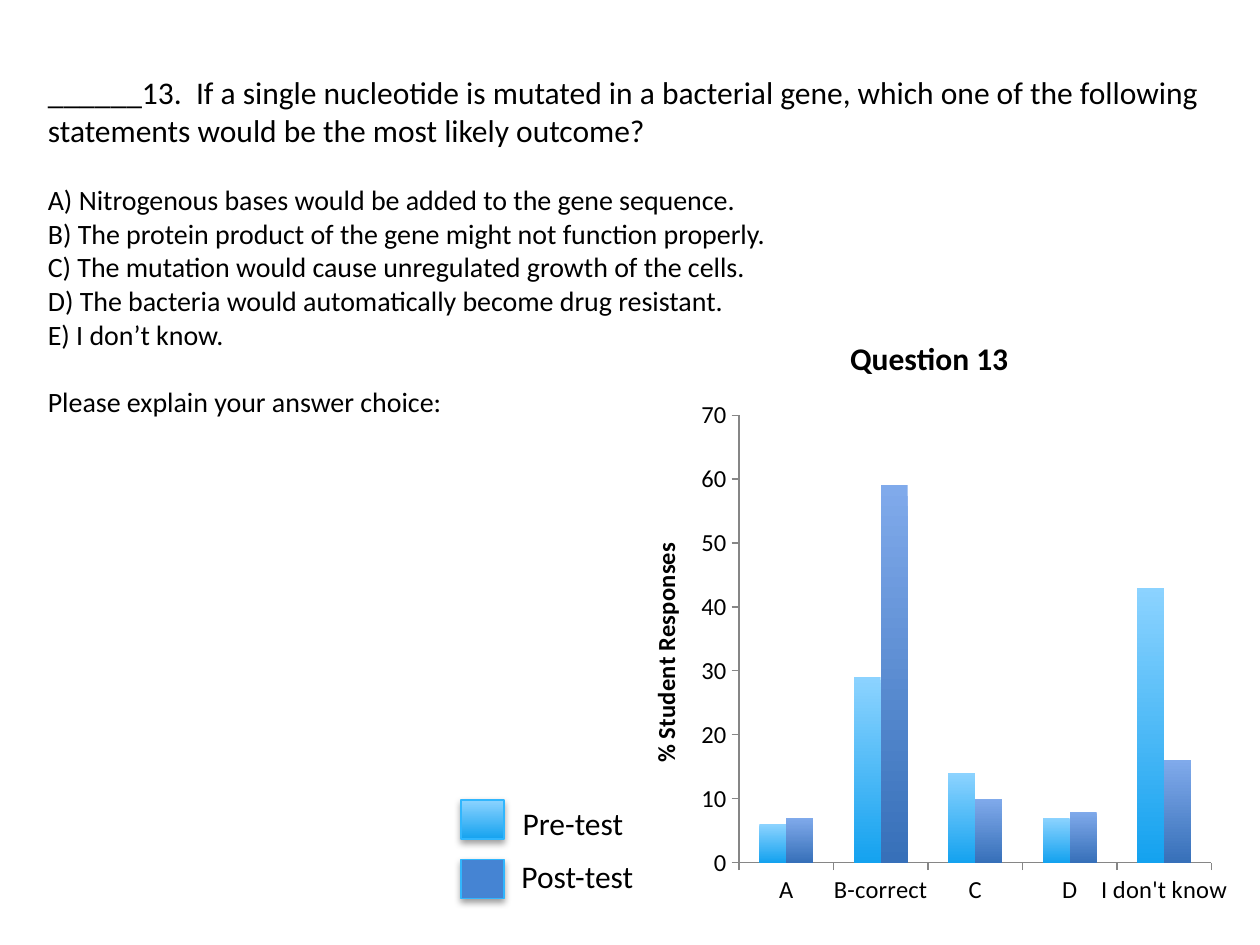
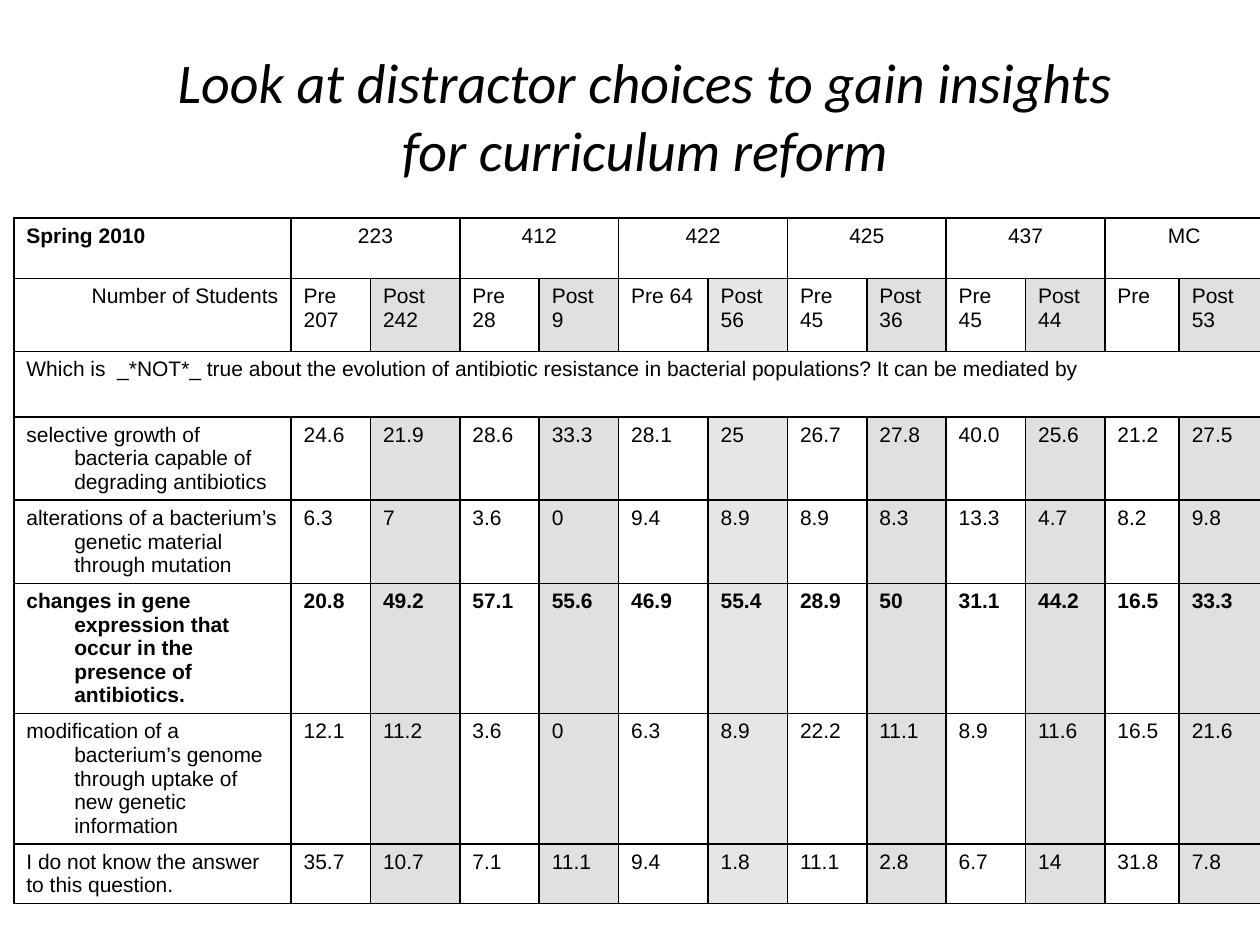
from pptx import Presentation
from pptx.chart.data import CategoryChartData
from pptx.dml.color import RGBColor
from pptx.enum.chart import XL_CHART_TYPE, XL_TICK_MARK
from pptx.enum.shapes import MSO_SHAPE
from pptx.enum.text import MSO_ANCHOR, MSO_AUTO_SIZE, PP_ALIGN
from pptx.oxml import parse_xml
from pptx.oxml.ns import nsdecls, qn
from pptx.util import Inches, Pt

BLACK, WHITE, SKY, BLUE, AXIS = "000000", "FFFFFF", "31B6FD", "4584D3", "868686"
POST_FILL, POST_FILL_LIGHT = "E0E0E0", "E6E6E6"
PRE_GRADIENT = ("8CD3FF", "14A2EF")
POST_GRADIENT = ("80AAEB", "3770B9")

QUESTION_FONT = {"name": "Calibri", "size": Pt(18), "bold": False}
ANSWER_FONT = {"name": "Calibri", "size": Pt(16), "bold": False}
HEADLINE_FONT = {"name": "Calibri", "size": Pt(32), "italic": True}
AXIS_FONT = {"name": "Calibri", "size": Pt(14), "bold": False}
CELL_FONT = {"name": "Arial", "size": Pt(12), "bold": False}
FRAME = {"word_wrap": True, "auto_size": MSO_AUTO_SIZE.NONE,
         "vertical_anchor": MSO_ANCHOR.TOP}

QUESTION = ("______13.  If a single nucleotide is mutated in a bacterial gene, "
            "which one of the following statements would be the most likely outcome?")
ANSWERS = [
    "A) Nitrogenous bases would be added to the gene sequence.",
    "B) The protein product of the gene might not function properly.",
    "C) The mutation would cause unregulated growth of the cells.",
    "D) The bacteria would automatically become drug resistant.",
    "E) I don’t know.",
]
EXPLAIN = "Please explain your answer choice:"
CHOICES = ["A", "B-correct", "C", "D", "I don't know"]
RESPONSES = [
    ("Series 1", [6, 29, 14, 7, 43], PRE_GRADIENT),
    ("Series 2", [7, 59, 10, 8, 16], POST_GRADIENT),
]

COURSES = ["223", "412", "422", "425", "437", "MC"]
STUDENTS = ["Pre 207", "Post\n242", "Pre 28", "Post\n9", "Pre 64", "Post\n56",
            "Pre 45", "Post\n36", "Pre 45", "Post\n44", "Pre", "Post\n53"]
STEM = ("Which is  _*NOT*_ true about the evolution of antibiotic resistance "
        "in bacterial populations? It can be mediated by")
CORRECT = "changes in gene expression that occur in the presence of antibiotics."
UNSURE = "I do not know the answer to this question."
DISTRACTORS = [
    ("selective growth of bacteria capable of degrading antibiotics",
     "24.6 21.9 28.6 33.3 28.1 25 26.7 27.8 40.0 25.6 21.2 27.5"),
    ("alterations of a bacterium’s genetic material through mutation",
     "6.3 7 3.6 0 9.4 8.9 8.9 8.3 13.3 4.7 8.2 9.8"),
    (CORRECT, "20.8 49.2 57.1 55.6 46.9 55.4 28.9 50 31.1 44.2 16.5 33.3"),
    ("modification of a bacterium’s genome through uptake of new genetic information",
     "12.1 11.2 3.6 0 6.3 8.9 22.2 11.1 8.9 11.6 16.5 21.6"),
    (UNSURE, "35.7 10.7 7.1 11.1 9.4 1.8 11.1 2.8 6.7 14 31.8 7.8"),
]
COL_WIDTHS = [2.2, 0.63, 0.71, 0.63, 0.63, 0.71, 0.63, 0.63, 0.63, 0.63, 0.63, 0.59, 0.67]
ROW_HEIGHTS = [0.48, 0.58, 0.52, 0.64, 0.64, 1.01, 1.01, 0.46]


def rgb(color):
    return RGBColor.from_string(color)


def set_attrs(obj, values):
    for name, value in values.items():
        setattr(obj, name, value)


def style_font(font, values):
    set_attrs(font, values)
    font.color.rgb = rgb(BLACK)


def place(sp, left, top, width, height):
    set_attrs(sp, {"left": Inches(left), "top": Inches(top),
                   "width": Inches(width), "height": Inches(height)})


def write(tf, lines, font, align=PP_ALIGN.LEFT, left=0, hang=0):
    for i, line in enumerate(lines):
        p = tf.paragraphs[0] if i == 0 else tf.add_paragraph()
        set_attrs(p, {"alignment": align, "space_before": Pt(0)})
        pPr = p._p.get_or_add_pPr()
        pPr.set("marL", str(Inches(left)))
        pPr.set("indent", str(Inches(-hang)))
        pPr.append(parse_xml(f"<a:buNone {nsdecls('a')}/>"))
        r = p.add_run()
        r.text = line
        style_font(r.font, font)


def fill_placeholder(sp, box, lines, font, align=PP_ALIGN.LEFT):
    place(sp, *box)
    set_attrs(sp.text_frame, FRAME)
    write(sp.text_frame, lines, font, align)


def fill_gradient(fill, colors):
    fill.gradient()
    fill.gradient_angle = 270
    for stop, color in zip(fill.gradient_stops, colors):
        stop.color.rgb = rgb(color)


def add_label(s, text, left, top, width):
    sp = s.shapes.add_textbox(Inches(left), Inches(top), Inches(width), Inches(0.4))
    sp.text_frame.word_wrap = False
    write(sp.text_frame, [text], QUESTION_FONT)


def add_swatch(s, top):
    sp = s.shapes.add_shape(MSO_SHAPE.RECTANGLE, Inches(3.66), Inches(top),
                            Inches(0.34), Inches(0.31))
    sp.line.color.rgb = rgb(SKY)
    sp.line.width = Pt(0.75)
    sp.shadow.inherit = False
    sp._element.spPr.find(qn("a:effectLst")).append(parse_xml(
        f'<a:outerShdw {nsdecls("a")} blurRad="{Pt(4)}" dist="{Pt(2)}" dir="5400000" '
        f'rotWithShape="0"><a:srgbClr val="{BLACK}"><a:alpha val="38000"/>'
        '</a:srgbClr></a:outerShdw>'))
    return sp


def add_legend(s):
    fill_gradient(add_swatch(s, 6.35).fill, PRE_GRADIENT)
    post = add_swatch(s, 6.82)
    post.fill.solid()
    post.fill.fore_color.rgb = rgb(BLUE)
    add_label(s, "Pre-test", 4.05, 6.33, 1.04)
    add_label(s, "Post-test", 4.04, 6.75, 1.16)


def set_title(owner, text, font):
    tf = (owner.chart_title if hasattr(owner, "chart_title") else owner.axis_title).text_frame
    tf.text = text
    style_font(tf.paragraphs[0].runs[0].font, {**font, "bold": True})


def fix_plot_area(chart, x, y, w, h):
    area = chart._chartSpace.chart.plotArea
    for old in area.findall(qn("c:layout")):
        area.remove(old)
    sizes = "".join(f'<c:{k} val="{v}"/>' for k, v in zip("xywh", (x, y, w, h)))
    area.insert(0, parse_xml(
        f'<c:layout {nsdecls("c")}><c:manualLayout><c:layoutTarget val="inner"/>'
        f'<c:xMode val="edge"/><c:yMode val="edge"/>{sizes}</c:manualLayout></c:layout>'))


def add_response_chart(s):
    data = CategoryChartData()
    data.categories = CHOICES
    for name, values, _ in RESPONSES:
        data.add_series(name, values)
    chart = s.shapes.add_chart(XL_CHART_TYPE.COLUMN_CLUSTERED, Inches(4.94), Inches(2.48),
                               Inches(4.87), Inches(4.8), data).chart
    style_font(chart.font, AXIS_FONT)
    set_attrs(chart, {"has_legend": False, "has_title": True})
    set_title(chart, "Question 13", QUESTION_FONT)
    plot = chart.plots[0]
    set_attrs(plot, {"gap_width": 150, "overlap": 0, "vary_by_categories": False})
    for series, (_, _, colors) in zip(plot.series, RESPONSES):
        fill_gradient(series.format.fill, colors)
    for axis in (chart.category_axis, chart.value_axis):
        set_attrs(axis, {"has_major_gridlines": False,
                         "major_tick_mark": XL_TICK_MARK.OUTSIDE})
        axis.format.line.color.rgb = rgb(AXIS)
        style_font(axis.tick_labels.font, AXIS_FONT)
    set_attrs(chart.value_axis, {"minimum_scale": 0, "maximum_scale": 70, "major_unit": 10})
    set_title(chart.value_axis, "% Student Responses", AXIS_FONT)
    fix_plot_area(chart, 0.19, 0.17, 0.77, 0.74)


def style_cell(cell, color):
    tcPr = cell._tc.get_or_add_tcPr()
    for side in ("lnL", "lnR", "lnT", "lnB"):
        tcPr.append(parse_xml(
            f'<a:{side} {nsdecls("a")} w="{Pt(1)}"><a:solidFill>'
            f'<a:srgbClr val="{BLACK}"/></a:solidFill></a:{side}>'))
    cell.fill.solid()
    cell.fill.fore_color.rgb = rgb(color)


def cell_color(row, col):
    if row in (0, 2) or col == 0 or col % 2:
        return WHITE
    return POST_FILL_LIGHT if col == 6 else POST_FILL


def add_distractor_table(s):
    table = s.shapes.add_table(len(ROW_HEIGHTS), len(COL_WIDTHS), Inches(0.11), Inches(1.73),
                               Inches(sum(COL_WIDTHS)), Inches(sum(ROW_HEIGHTS))).table
    set_attrs(table, {"first_row": False, "horz_banding": False})
    for column, width in zip(table.columns, COL_WIDTHS):
        column.width = Inches(width)
    for row, height in zip(table.rows, ROW_HEIGHTS):
        row.height = Inches(height)
    for i in range(len(ROW_HEIGHTS)):
        for j in range(len(COL_WIDTHS)):
            style_cell(table.cell(i, j), cell_color(i, j))

    bold = {**CELL_FONT, "bold": True}
    write(table.cell(0, 0).text_frame, ["Spring 2010"], bold)
    for i, course in enumerate(COURSES):
        cell = table.cell(0, 2 * i + 1)
        cell.merge(table.cell(0, 2 * i + 2))
        write(cell.text_frame, [course], CELL_FONT, PP_ALIGN.CENTER)
    write(table.cell(1, 0).text_frame, ["Number of Students"], CELL_FONT, PP_ALIGN.RIGHT)
    for j, count in enumerate(STUDENTS, 1):
        write(table.cell(1, j).text_frame, count.split("\n"), CELL_FONT)
    table.cell(2, 0).merge(table.cell(2, len(COL_WIDTHS) - 1))
    write(table.cell(2, 0).text_frame, [STEM], CELL_FONT)
    for i, (choice, values) in enumerate(DISTRACTORS, 3):
        font = bold if choice == CORRECT else CELL_FONT
        hang = 0 if choice == UNSURE else 0.38
        write(table.cell(i, 0).text_frame, [choice], font, left=hang, hang=hang)
        for j, value in enumerate(values.split(), 1):
            write(table.cell(i, j).text_frame, [value], font)


def add_question_slide(prs):
    s = prs.slides.add_slide(prs.slide_layouts[1])
    fill_placeholder(s.shapes.title, (0.28, 0.53, 9.53, 0.75), [QUESTION], QUESTION_FONT)
    body = s.placeholders[1]
    fill_placeholder(body, (0.28, 1.4, 9.53, 2.26), ANSWERS + [EXPLAIN], ANSWER_FONT)
    body.text_frame.paragraphs[-1].space_before = Pt(19.5)
    add_response_chart(s)
    add_legend(s)


def add_distractor_slide(prs):
    s = prs.slides.add_slide(prs.slide_layouts[5])
    fill_placeholder(s.shapes.title, (1.08, 0.33, 8.08, 1.18),
                     ["Look at distractor choices to gain insights for curriculum reform"],
                     HEADLINE_FONT, PP_ALIGN.CENTER)
    add_distractor_table(s)


def main():
    prs = Presentation()
    set_attrs(prs, {"slide_width": Inches(10), "slide_height": Inches(7.5)})
    add_question_slide(prs)
    add_distractor_slide(prs)
    prs.save("out.pptx")


if __name__ == "__main__":
    main()
